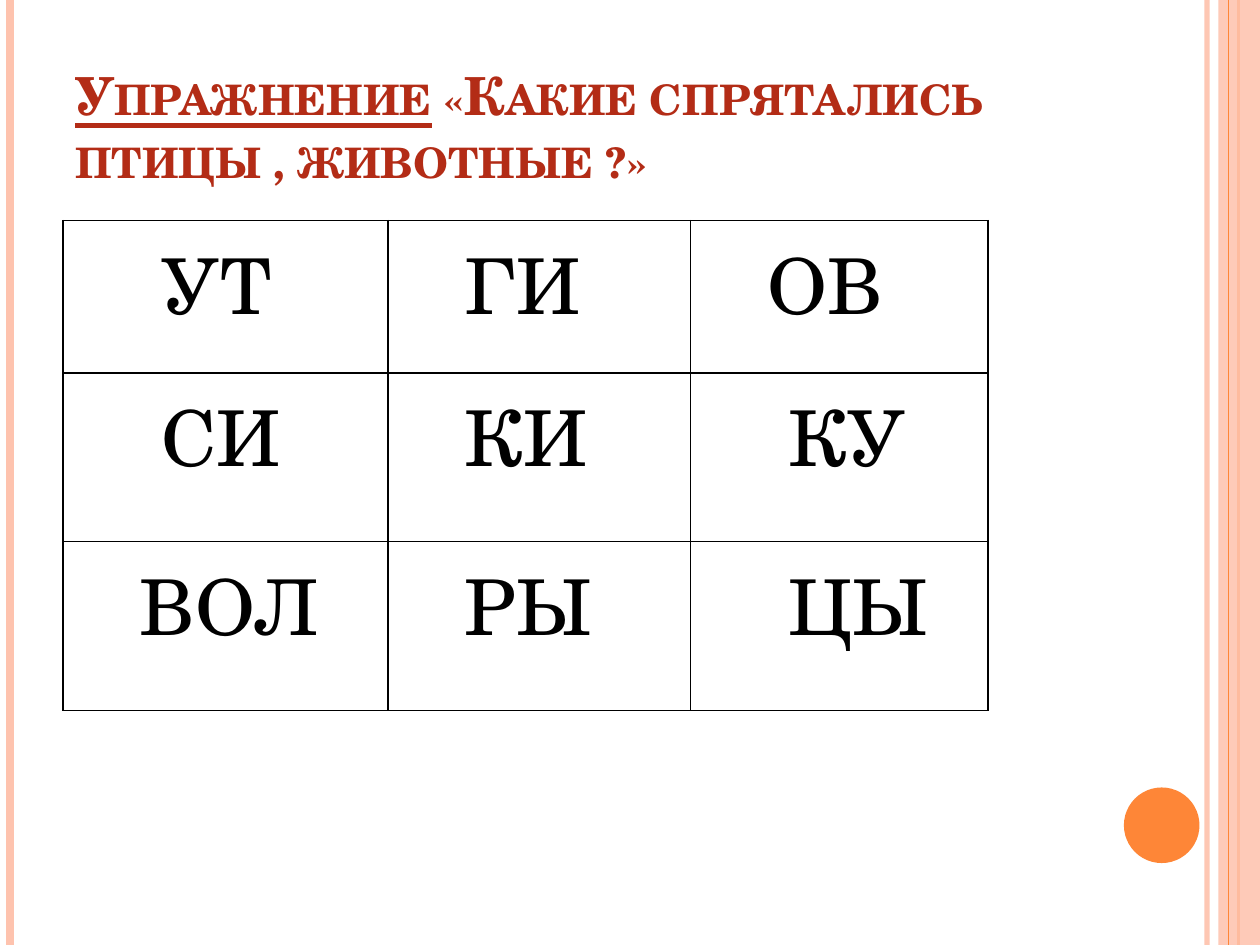
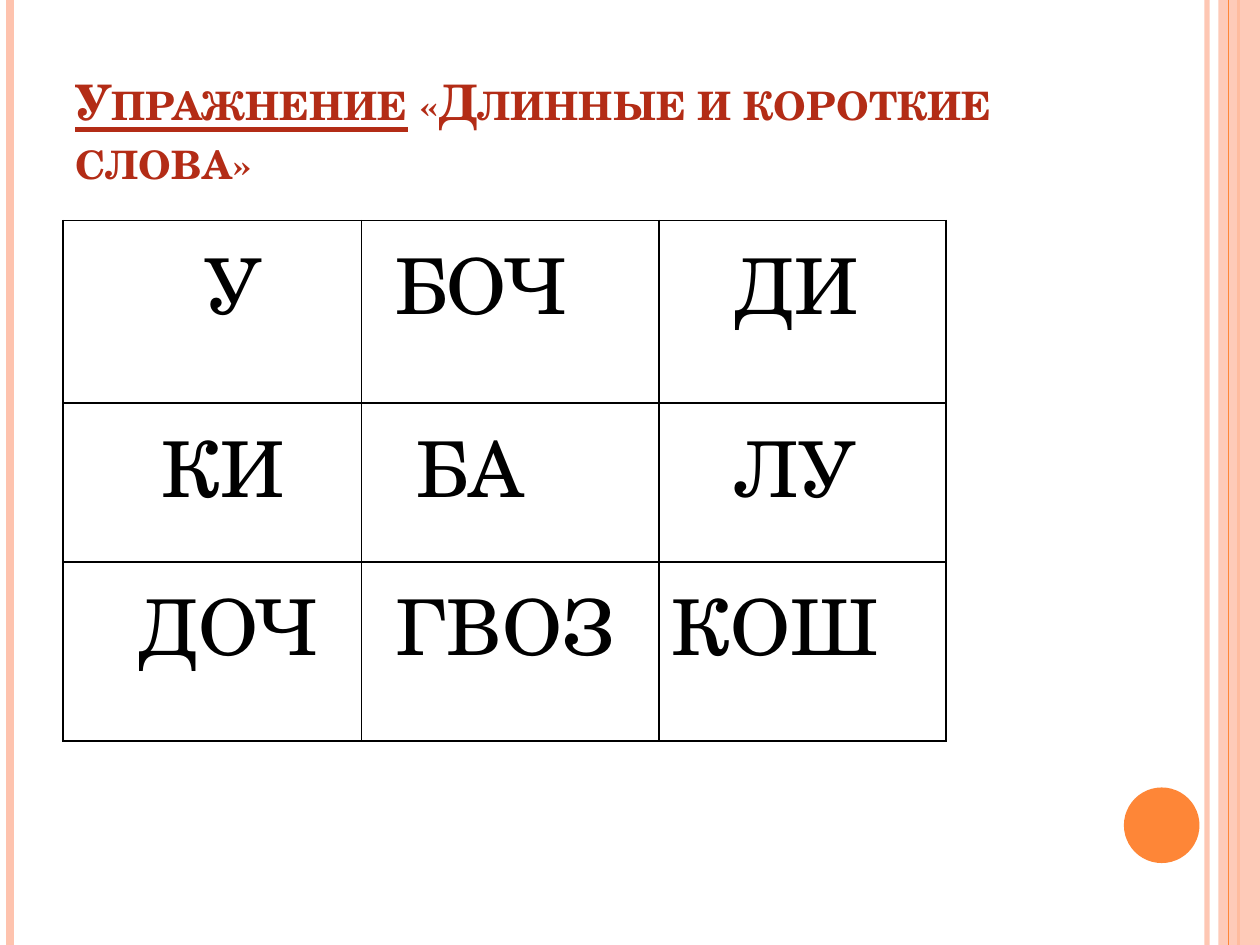
from lxml.etree import SubElement
from pptx import Presentation
from pptx.dml.color import RGBColor
from pptx.enum.shapes import MSO_CONNECTOR, MSO_SHAPE
from pptx.enum.text import MSO_ANCHOR
from pptx.oxml.ns import qn
from pptx.util import Inches, Pt

COLORS = {"peach": "FEC3AE", "orange": "FE8637", "title": "B32C16", "text": "000000"}
FONT = "TeX Gyre Schola"
SYLLABLE_SIZE = 44
CELL_MARGIN = 0.1
INDENT_STEP = 0.17


class Deck:
    def __init__(self):
        self.presentation = Presentation()
        self.presentation.slide_width = Inches(10)
        self.presentation.slide_height = Inches(7.5)
        self.slide = None

    def color(self, name):
        return RGBColor.from_string(COLORS[name])

    def set_alpha(self, properties, percent):
        color = next(properties.iter(qn("a:srgbClr")))
        SubElement(color, qn("a:alpha"), val=str(percent * 1000))

    def add_slide(self):
        self.slide = self.presentation.slides.add_slide(self.presentation.slide_layouts[6])
        self.add_stripe(9.58, "peach", 3, 93)
        self.add_stripe(0.08, "peach", 4.5)
        self.add_stripe(9.83, "orange", 1.5)
        self.add_shape(MSO_SHAPE.RECTANGLE, 9.67, 0, 0.33, 7.5, "peach", 87)
        self.add_stripe(9.75, "orange", 0.75)
        self.add_shape(MSO_SHAPE.OVAL, 8.92, 6.25, 0.6, 0.6, "orange")

    def add_stripe(self, x, color, width, alpha=100):
        stripe = self.slide.shapes.add_connector(
            MSO_CONNECTOR.STRAIGHT, Inches(x), Inches(0), Inches(x), Inches(7.5))
        stripe.line.color.rgb = self.color(color)
        stripe.line.width = Pt(width)
        properties = stripe._element.spPr
        SubElement(properties, qn("a:effectLst"))
        if alpha < 100:
            self.set_alpha(properties, alpha)

    def add_shape(self, kind, left, top, width, height, color, alpha=100):
        shape = self.slide.shapes.add_shape(
            kind, Inches(left), Inches(top), Inches(width), Inches(height))
        shape.shadow.inherit = False
        shape.fill.solid()
        shape.fill.fore_color.rgb = self.color(color)
        shape.line.fill.background()
        if alpha < 100:
            self.set_alpha(shape._element.spPr, alpha)

    def add_run(self, paragraph, text, size, color):
        run = paragraph.add_run()
        run.text = text
        run.font.name = FONT
        run.font.size = Pt(size)
        run.font.color.rgb = self.color(color)
        return run

    def add_title(self, label, name, size):
        box = self.slide.shapes.add_textbox(Inches(0.5), Inches(0.3), Inches(8.17), Inches(1.25))
        frame = box.text_frame
        frame.word_wrap = True
        frame.vertical_anchor = MSO_ANCHOR.BOTTOM
        for text, underline in ((label, True), (f" {name}", False)):
            run = self.add_run(frame.paragraphs[0], text, size, "title")
            run.font.bold = True
            run.font.underline = underline
            run.font._element.set("cap", "small")

    def add_syllable_table(self, widths, heights, rows):
        frame = self.slide.shapes.add_table(
            len(heights), len(widths), Inches(0.5), Inches(1.75),
            Inches(sum(widths)), Inches(sum(heights)))
        table = frame.table
        table.first_row = False
        table.horz_banding = False
        for column, width in zip(table.columns, widths):
            column.width = Inches(width)
        for row, height, syllables in zip(table.rows, heights, rows):
            row.height = Inches(height)
            for cell, (syllable, indent) in zip(row.cells, syllables):
                self.fill_cell(cell, syllable, indent)

    def fill_cell(self, cell, syllable, indent):
        cell.margin_left = Inches(CELL_MARGIN + indent * INDENT_STEP)
        self.add_run(cell.text_frame.paragraphs[0], syllable, SYLLABLE_SIZE, "text")
        properties = cell._tc.get_or_add_tcPr()
        for side in ("lnL", "lnR", "lnT", "lnB"):
            border = SubElement(properties, qn(f"a:{side}"), w=str(Pt(1)))
            fill = SubElement(border, qn("a:solidFill"))
            SubElement(fill, qn("a:srgbClr"), val=COLORS["text"])
        cell.fill.background()


def main():
    deck = Deck()

    deck.add_slide()
    deck.add_title("Упражнение", "«Какие спрятались птицы , животные ?»", 30)
    deck.add_syllable_table([2.58, 2.4, 2.36], [1.21, 1.34, 1.34], [
        [("УТ", 4), ("ГИ", 3), ("ОВ", 3)],
        [("СИ", 4), ("КИ", 3), ("КУ", 4)],
        [("ВОЛ", 3), ("РЫ", 3), ("ЦЫ", 4)],
    ])

    deck.add_slide()
    deck.add_title("Упражнение", "«Длинные и короткие слова»", 28)
    deck.add_syllable_table([2.37, 2.36, 2.28], [1.45, 1.26, 1.42], [
        [("У", 6), ("БОЧ", 1), ("ДИ", 3)],
        [("КИ", 4), ("БА", 2), ("ЛУ", 3)],
        [("ДОЧ", 3), ("ГВОЗ", 1), ("КОШ", 0)],
    ])

    deck.presentation.save("out.pptx")


if __name__ == "__main__":
    main()
